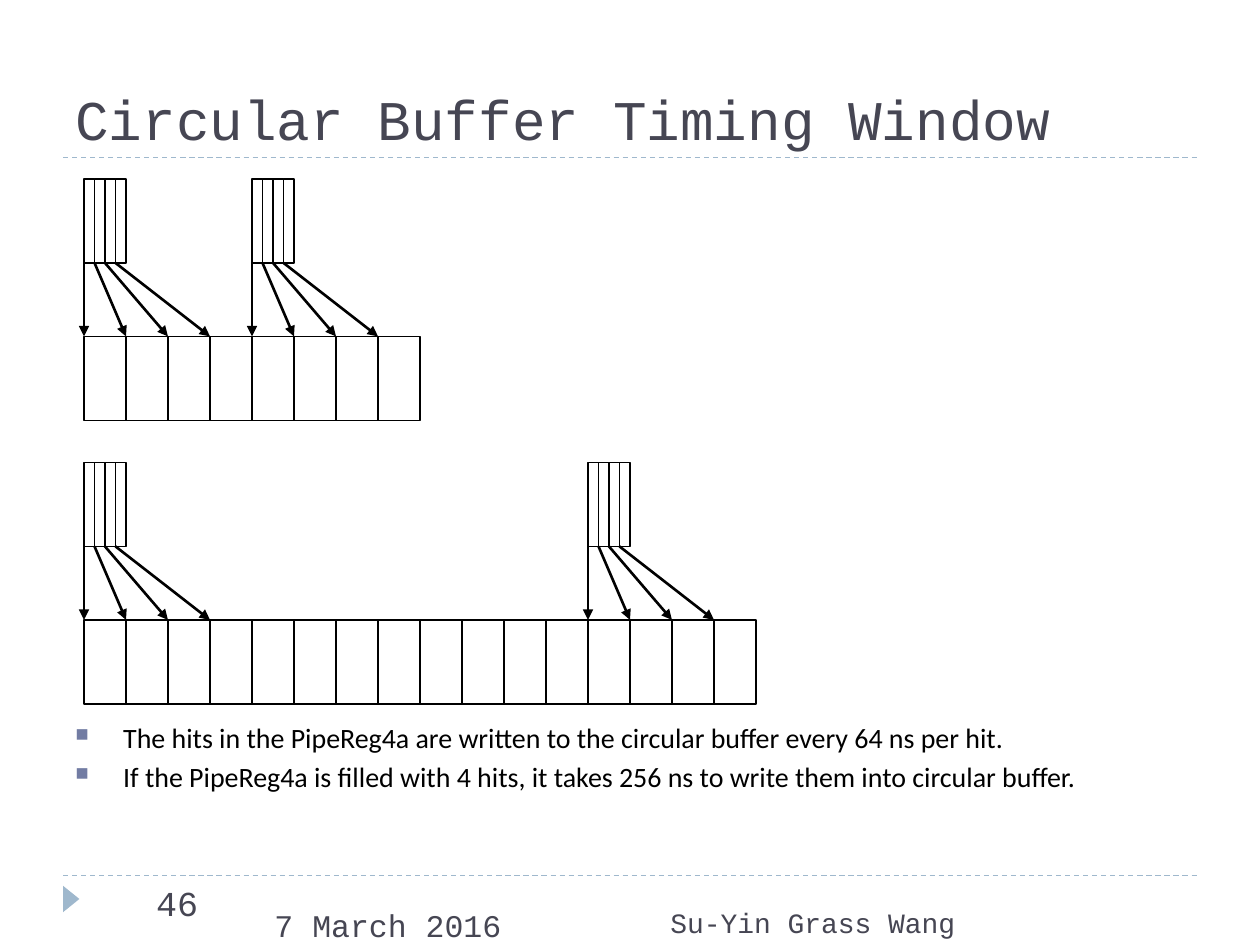
import lxml.etree
import pptx
import pptx.dml.color
import pptx.enum.dml
import pptx.enum.shapes
import pptx.enum.text
import pptx.oxml.ns
import pptx.util

Inches = pptx.util.Inches
Pt = pptx.util.Pt
qn = pptx.oxml.ns.qn
ALIGN = pptx.enum.text.PP_ALIGN
ANCHOR = pptx.enum.text.MSO_ANCHOR
SHAPE = pptx.enum.shapes.MSO_SHAPE
COLORS = {"ink": "464653", "accent": "9FB8CD", "bullet": "727CA3", "black": "000000", "white": "FFFFFF"}


class SlidePainter:
    """Draws styled elements on the current slide."""

    def __init__(self, page):
        self.page = page
        self.mono = {"name": "Courier New", "color": "ink"}
        self.body = {"name": "Calibri", "color": "black", "size": Pt(16)}

    def color(self, name):
        return pptx.dml.color.RGBColor.from_string(COLORS[name])

    def apply(self, target, values):
        for name, value in values.items():
            if name == "color":
                target.color.rgb = self.color(value)
            else:
                setattr(target, name, value)

    def add_xml(self, parent, tag, **attributes):
        return lxml.etree.SubElement(parent, qn(tag), attributes)

    def text(self, area, lines, font, align=ALIGN.LEFT, anchor=ANCHOR.TOP, bullets=False):
        box = self.page.shapes.add_textbox(*map(Inches, area))
        frame = box.text_frame
        self.apply(frame, {"word_wrap": True, "vertical_anchor": anchor})
        for index, line in enumerate(lines):
            para = frame.add_paragraph() if index else frame.paragraphs[0]
            para.alignment = align
            if index:
                para.space_before = Pt(3.2)
            if bullets:
                self.bullet(para)
            span = para.add_run()
            span.text = line
            self.apply(span.font, font)

    def bullet(self, para):
        properties = para._p.get_or_add_pPr()
        indent = Inches(0.38)
        properties.set("marL", str(indent))
        properties.set("indent", str(-indent))
        tint = self.add_xml(properties, "a:buClr")
        self.add_xml(tint, "a:srgbClr", val=COLORS["bullet"])
        self.add_xml(properties, "a:buSzPct", val="65000")
        self.add_xml(properties, "a:buChar", char="■")

    def shape(self, kind, area, fill, line=None, rotation=0):
        box = self.page.shapes.add_shape(kind, *map(Inches, area))
        box.shadow.inherit = False
        box.rotation = rotation
        box.fill.solid()
        box.fill.fore_color.rgb = self.color(fill)
        if line:
            self.apply(box.line, line)
        else:
            box.line.fill.background()

    def line(self, start, end, style, arrow=False):
        connector = self.page.shapes.add_connector(
            pptx.enum.shapes.MSO_CONNECTOR.STRAIGHT, *map(Inches, (*start, *end)))
        self.apply(connector.line, style)
        properties = connector._element.spPr
        if arrow:
            self.add_xml(properties.find(qn("a:ln")), "a:tailEnd", type="triangle")
        self.add_xml(properties, "a:effectLst")

    def cells(self, left, top, width, height, count):
        for index in range(count):
            self.shape(SHAPE.RECTANGLE, (left + index * width, top, width, height),
                       "white", {"color": "black", "width": Pt(0.75)})

    def buffer(self, top, slots, window_starts):
        left, slot, height, drop, hits = 2 / 3, 1 / 3, 2 / 3, 1.25, 4
        hit = slot / hits
        self.cells(left, top + drop, slot, height, slots)
        for start in window_starts:
            window = left + start * slot
            self.cells(window, top, hit, height, hits)
            for index in range(hits):
                self.line((window + index * hit, top + height),
                          (window + index * slot, top + drop),
                          {"color": "black", "width": Pt(1.5)}, arrow=True)


def main():
    deck = pptx.Presentation()
    deck.slide_width, deck.slide_height = Inches(10), Inches(7.5)
    painter = SlidePainter(deck.slides.add_slide(deck.slide_layouts[6]))

    rule = {"color": "accent", "width": Pt(0.75), "dash_style": pptx.enum.dml.MSO_LINE.DASH}
    for height in (6.95, 1.25):
        painter.line((0.5, height), (9.5, height), rule)
    painter.shape(SHAPE.ISOSCELES_TRIANGLE, (0.46, 7.07, 0.21, 0.13), "accent", rotation=90)

    mono = painter.mono
    painter.text((0.5, 0.25, 9, 1), ["Circular Buffer Timing Window"],
                 {**mono, "size": Pt(32)}, anchor=ANCHOR.BOTTOM)
    painter.text((2.08, 7.14, 3.58, 0.55), ["7 March 2016"], {**mono, "size": Pt(18)})
    painter.text((5.16, 7.14, 2.52, 0.36), ["Su-Yin Grass Wang"],
                 {**mono, "size": Pt(16)}, align=ALIGN.RIGHT)
    painter.text((1.14, 6.95, 0.79, 0.55), ["46"], {**mono, "size": Pt(20)})

    painter.buffer(top=1.42, slots=8, window_starts=(0, 4))
    painter.buffer(top=3.67, slots=16, window_starts=(0, 12))

    painter.text((0.5, 5.67, 8.83, 1.33), [
        "The hits in the PipeReg4a are written to the circular buffer every 64 ns per hit.",
        "If the PipeReg4a is filled with 4 hits, it takes 256 ns to write them into circular buffer.",
    ], painter.body, bullets=True)
    deck.save("out.pptx")


if __name__ == "__main__":
    main()
